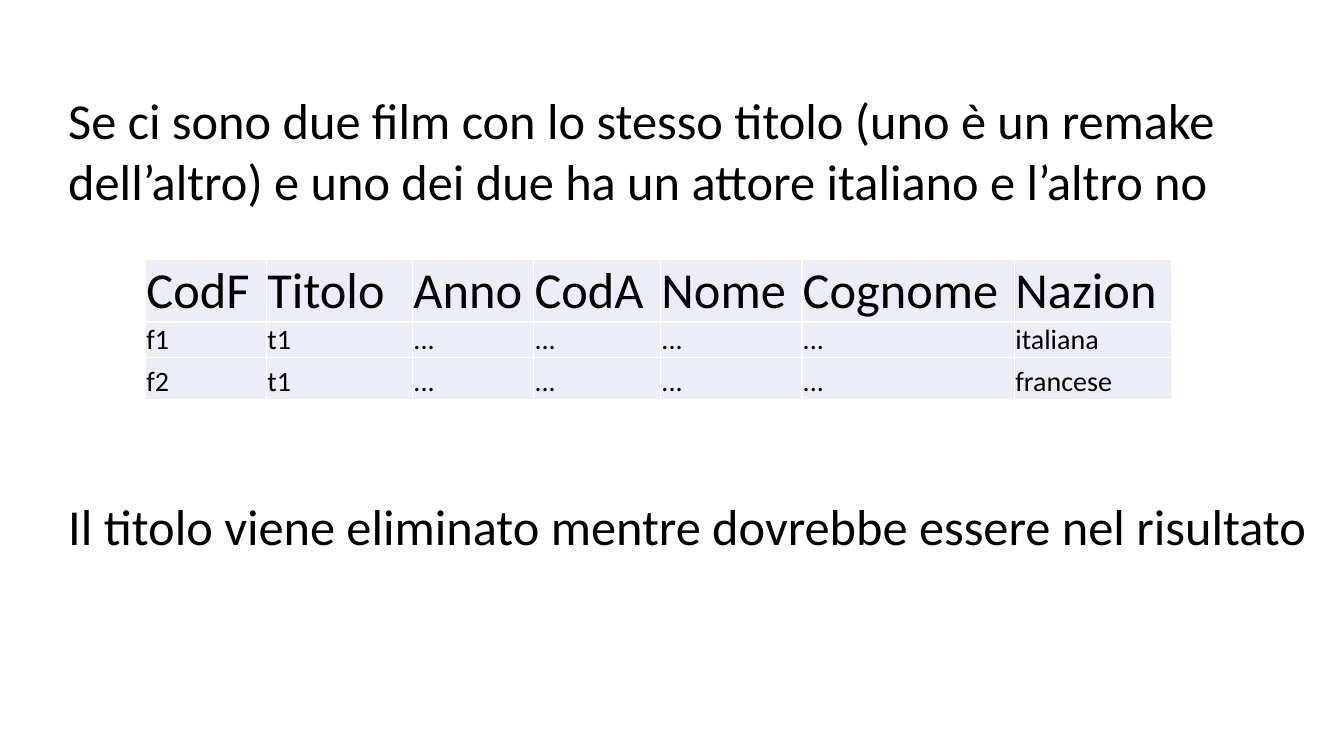
from pptx import Presentation
from pptx.dml.color import RGBColor
from pptx.enum.text import MSO_ANCHOR as Anchor, MSO_AUTO_SIZE as AutoSize
from pptx.oxml.ns import qn
from pptx.util import Cm, Pt
from lxml.etree import SubElement

FONT, BLACK, WHITE, PALE_BLUE = "Calibri", "000000", "FFFFFF", "EAEFF7"

INTRO = ["Se ci sono due film con lo stesso titolo (uno è un remake",
         "dell’altro) e uno dei due ha un attore italiano e l’altro no"]
CONCLUSION = ["Il titolo viene eliminato mentre dovrebbe essere nel risultato"]
FILMS = [
    ["CodF", "Titolo", "Anno", "CodA", "Nome", "Cognome", "Nazion"],
    ["f1", "t1", *["..."] * 4, "italiana"],
    ["f2", "t1", *["..."] * 4, "francese"],
]
COLUMN_WIDTHS = [3.05, 3.68, 3.05, 3.2, 3.56, 5.36, 3.96]
ROW_HEIGHTS = [1.55, 0.88, 1.06]


def color(hex_string):
    return RGBColor.from_string(hex_string)


def write(paragraph, text, size=36, font=FONT, ink=BLACK):
    run = paragraph.add_run()
    run.text = text
    run.font.size, run.font.name = Pt(size), font
    run.font.color.rgb = color(ink)


def add_statement(slide, lines, left, top, width, height):
    """Large text, one paragraph per line."""
    box = slide.shapes.add_textbox(Cm(left), Cm(top), Cm(width), Cm(height))
    frame = box.text_frame
    frame.word_wrap = False
    frame.auto_size = AutoSize.SHAPE_TO_FIT_TEXT
    for index, line in enumerate(lines):
        write(frame.add_paragraph() if index else frame.paragraphs[0], line)


def add_borders(cell, ink, width):
    properties = cell._tc.get_or_add_tcPr()
    for side in ("lnL", "lnR", "lnT", "lnB"):
        line = SubElement(properties, qn(f"a:{side}"), w=str(Pt(width)))
        fill = SubElement(line, qn("a:solidFill"))
        SubElement(fill, qn("a:srgbClr"), val=ink)


def format_cell(cell, text, size):
    cell.vertical_anchor = Anchor.BOTTOM
    cell.margin_left = cell.margin_right = cell.margin_top = Cm(0.02)
    cell.margin_bottom = 0
    add_borders(cell, WHITE, 1)
    cell.fill.solid()
    cell.fill.fore_color.rgb = color(PALE_BLUE)
    write(cell.text_frame.paragraphs[0], text, size=size)


def add_film_table(slide, left, top):
    table = slide.shapes.add_table(
        len(FILMS), len(COLUMN_WIDTHS), Cm(left), Cm(top),
        Cm(sum(COLUMN_WIDTHS)), Cm(sum(ROW_HEIGHTS))).table
    table.first_row = table.horz_banding = False
    for column, width in zip(table.columns, COLUMN_WIDTHS):
        column.width = Cm(width)
    for row, height, values in zip(table.rows, ROW_HEIGHTS, FILMS):
        row.height = Cm(height)
        size = 36 if values is FILMS[0] else 20
        for cell, value in zip(row.cells, values):
            format_cell(cell, value, size)


def main():
    presentation = Presentation()
    presentation.slide_width, presentation.slide_height = Cm(33.87), Cm(19.05)
    slide = presentation.slides.add_slide(presentation.slide_layouts[6])

    # Table of films and actors
    add_film_table(slide, 3.67, 6.54)
    # Statements above and below it
    add_statement(slide, INTRO, 1.47, 2.13, 29.97, 3.33)
    add_statement(slide, CONCLUSION, 1.47, 12.35, 32, 1.8)

    presentation.save("out.pptx")


if __name__ == "__main__":
    main()
